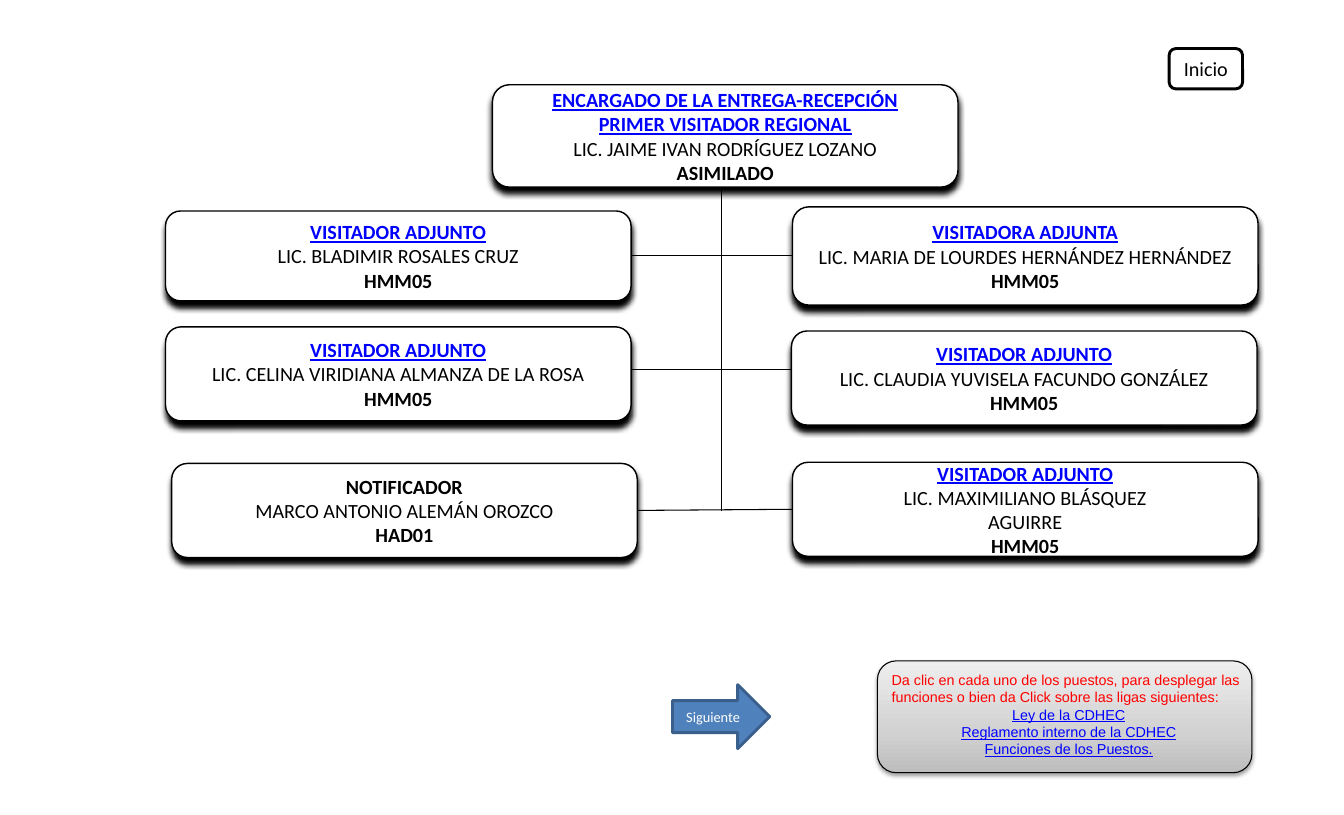
from copy import deepcopy
from pptx import Presentation
from pptx.dml.color import RGBColor
from pptx.enum.shapes import MSO_CONNECTOR as Connector, MSO_SHAPE as Shape
from pptx.enum.text import MSO_ANCHOR as Anchor, MSO_AUTO_SIZE as AutoSize, PP_ALIGN as Align
from pptx.oxml.ns import qn
from pptx.oxml.xmlchemy import OxmlElement
from pptx.util import Pt

color = RGBColor.from_string

LINK = ("0000FF", True, True)
NAME = ("000000", False, False)
BOLD = ("000000", True, False)
RED = ("FF0000", False, False)
PLAIN_LINK = ("0000FF", False, True)
WHITE = ("FFFFFF", False, False)


def add_box(kind, frame, fill, line, weight, shadow=None):
    box = page.shapes.add_shape(kind, *[Pt(value) for value in frame])
    box.fill.solid()
    box.fill.fore_color.rgb = color(fill)
    box.line.color.rgb = color(line)
    box.line.width = Pt(weight)
    box.shadow.inherit = False
    if shadow:
        blur, distance, opacity = shadow
        outer = OxmlElement("a:outerShdw")
        outer.set("blurRad", str(Pt(blur)))
        outer.set("dist", str(Pt(distance)))
        outer.set("dir", "5400000")
        outer.set("rotWithShape", "0")
        tone = OxmlElement("a:srgbClr")
        tone.set("val", "000000")
        alpha = OxmlElement("a:alpha")
        alpha.set("val", str(opacity * 1000))
        tone.append(alpha)
        outer.append(tone)
        box._element.spPr.find(qn("a:effectLst")).append(outer)
    return box


def write(box, lines, size, font="Calibri"):
    frame = box.text_frame
    frame.text = "\n".join(text for text, style in lines)
    for para, (text, style) in zip(frame.paragraphs, lines):
        para.alignment = Align.CENTER
        span = para.runs[0].font
        span.name = font
        span.size = Pt(size)
        span.color.rgb = color(style[0])
        span.bold, span.underline = style[1:]


deck = Presentation()
deck.slide_width = Pt(935.28)
deck.slide_height = Pt(567.36)
page = deck.slides.add_slide(deck.slide_layouts[6])

lines = []
for left, top, right, bottom in [
    (422.6, 257, 587.5, 257),
    (439.2, 178.2, 551.5, 178.2),
    (443.5, 355.2, 551.5, 355.2),
    (501.8, 132.5, 501.8, 355.7),
]:
    line = page.shapes.add_connector(Connector.STRAIGHT, Pt(left), Pt(top), Pt(right), Pt(bottom))
    line.line.color.rgb = color("000000")
    line.line.width = Pt(0.75)
    line._element.spPr.append(OxmlElement("a:effectLst"))
    lines.append(line)

posts = [
    (342.7, 59, 71.3, [
        ("ENCARGADO DE LA ENTREGA-RECEPCIÓN", LINK),
        ("PRIMER VISITADOR REGIONAL", LINK),
        ("LIC. JAIME IVAN RODRÍGUEZ LOZANO", NAME),
        ("ASIMILADO", BOLD)]),
    (115.2, 146.9, 62.6, [
        ("VISITADOR ADJUNTO", LINK),
        ("LIC. BLADIMIR ROSALES CRUZ", NAME),
        ("HMM05", BOLD)]),
    (551.5, 144, 68.4, [
        ("VISITADORA ADJUNTA", LINK),
        ("LIC. MARIA DE LOURDES HERNÁNDEZ HERNÁNDEZ", NAME),
        ("HMM05", BOLD)]),
    (115.2, 227.5, 65.5, [
        ("VISITADOR ADJUNTO", LINK),
        ("LIC. CELINA VIRIDIANA ALMANZA DE LA ROSA", NAME),
        ("HMM05", BOLD)]),
    (550.8, 230.4, 65.5, [
        ("VISITADOR ADJUNTO", LINK),
        ("LIC. CLAUDIA YUVISELA FACUNDO GONZÁLEZ", NAME),
        ("HMM05", BOLD)]),
    (119.5, 322.6, 65.5, [
        ("NOTIFICADOR", BOLD),
        ("MARCO ANTONIO ALEMÁN OROZCO", NAME),
        ("HAD01", BOLD)]),
    (551.5, 321.8, 65.5, [
        ("VISITADOR ADJUNTO", LINK),
        ("LIC. MAXIMILIANO BLÁSQUEZ", NAME),
        ("AGUIRRE", NAME),
        ("HMM05", BOLD)]),
]
boxes = []
for left, top, height, content in posts:
    box = add_box(Shape.ROUNDED_RECTANGLE, (left, top, 324, height), "FFFFFF", "000000", 1, (4, 4, 100))
    write(box, content, 14)
    frame = box.text_frame
    frame.word_wrap = False
    frame.vertical_anchor = Anchor.MIDDLE
    frame.margin_left = frame.margin_right = Pt(12.2)
    frame.margin_top = frame.margin_bottom = Pt(6.5)
    boxes.append(box)

for line, left_box, right_box in [(lines[1], boxes[1], boxes[2]), (lines[2], boxes[5], boxes[6])]:
    line.begin_connect(left_box, 3)
    line.end_connect(right_box, 1)

home = add_box(Shape.ROUNDED_RECTANGLE, (813.6, 33.8, 51.1, 28.1), "FFFFFF", "000000", 2)
write(home, [("Inicio", NAME)], 14)

panel = add_box(Shape.ROUNDED_RECTANGLE, (610.6, 460.1, 260.6, 77.8), "EEEEEE", "000000", 0.75, (3.1, 1.6, 38))
panel.fill.gradient()
panel.fill.gradient_angle = 90
stops = panel._element.spPr.find(".//" + qn("a:gsLst"))
stops.insert(1, deepcopy(stops[0]))
for stop, position, tone in zip(panel.fill.gradient_stops, (0, 0.35, 1), ("BDBDBD", "D1D1D1", "EEEEEE")):
    stop.position = position
    stop.color.rgb = color(tone)

guide = page.shapes.add_textbox(Pt(613.4), Pt(463.7), Pt(260.6), Pt(67.7))
guide.text_frame.word_wrap = True
guide.text_frame.auto_size = AutoSize.SHAPE_TO_FIT_TEXT
write(guide, [
    ("Da clic en cada uno de los puestos, para desplegar las funciones "
     "o bien da Click sobre las ligas siguientes:", RED),
    ("Ley de la CDHEC", PLAIN_LINK),
    ("Reglamento interno de la CDHEC", PLAIN_LINK),
    ("Funciones de los Puestos.", PLAIN_LINK),
], 10, "Arial")
guide.text_frame.paragraphs[0].alignment = Align.LEFT

following = add_box(Shape.RIGHT_ARROW, (468, 476.6, 67.7, 44.6), "4F81BD", "3A5F8C", 2)
write(following, [("Siguiente", WHITE)], 10)
following.text_frame.word_wrap = False

deck.save("out.pptx")
